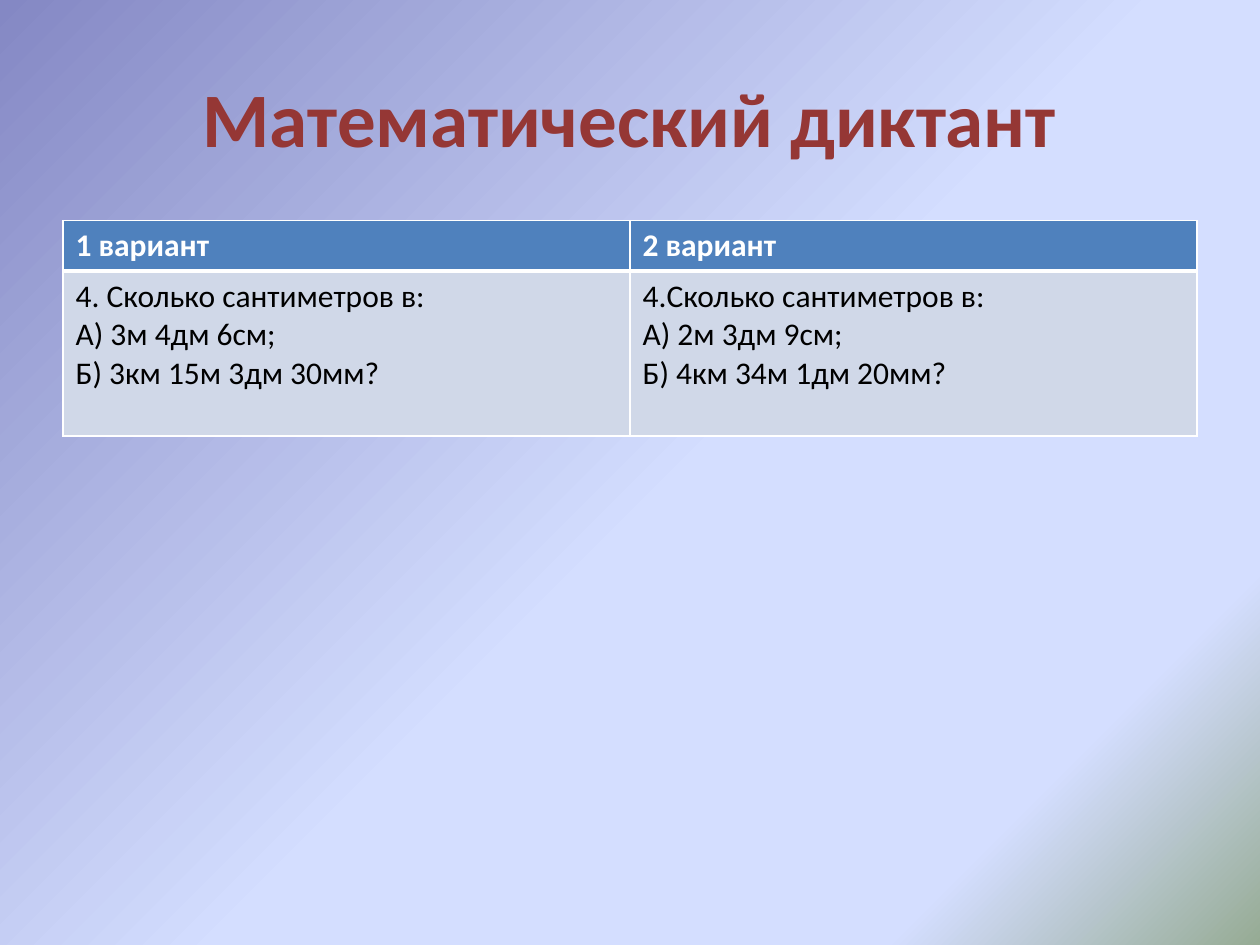
from lxml import etree
from pptx import Presentation
from pptx.dml.color import RGBColor
from pptx.enum.text import MSO_ANCHOR, PP_ALIGN
from pptx.oxml.ns import qn
from pptx.util import Inches, Pt

MIDDLE = MSO_ANCHOR.MIDDLE
CENTER = PP_ALIGN.CENTER
FONT = "Calibri"
WIDTH, HEIGHT = Inches(10), Inches(7.5)
MARGIN = 0.05
BACKGROUND_STOPS = [(0, "8488C4"), (53, "D4DEFF"), (83, "D4DEFF"), (100, "96AB94")]
ROW_HEIGHTS = [0.4, 1.31]
VARIANTS = [
    ["1 вариант", "4. Сколько сантиметров в:\nА) 3м 4дм 6см;\nБ) 3км 15м 3дм 30мм?"],
    ["2 вариант", "4.Сколько сантиметров в:\nА) 2м 3дм 9см;\nБ) 4км 34м 1дм 20мм?"],
]


def colour(value):
    """Return the colour for a hex string."""
    return RGBColor.from_string(value)


def add_colour(parent, value):
    """Append a hex colour element to an XML parent."""
    etree.SubElement(parent, qn("a:srgbClr"), val=value)


def paint_background(slide):
    """Fill the background with the diagonal gradient."""
    fill = slide.background.fill
    fill.gradient()
    fill.gradient_angle = 315
    stops = slide.element.find(".//" + qn("a:gsLst"))
    for stop in list(stops):
        stops.remove(stop)
    for position, value in BACKGROUND_STOPS:
        add_colour(etree.SubElement(stops, qn("a:gs"), pos=str(position * 1000)), value)


def write(frame, text, size, value, bold):
    """Set the text of a frame and format its runs."""
    frame.text = text
    for para in frame.paragraphs:
        for span in para.runs:
            span.font.name = FONT
            span.font.size = Pt(size)
            span.font.bold = bold
            span.font.color.rgb = colour(value)


def add_title(slide, text):
    """Add the centred heading."""
    box = slide.shapes.add_textbox(
        int(WIDTH * MARGIN), int(HEIGHT * 0.04),
        int(WIDTH * (1 - 2 * MARGIN)), Inches(1.25))
    frame = box.text_frame
    frame.word_wrap = True
    frame.vertical_anchor = MIDDLE
    write(frame, text, 44, "953735", True)
    frame.paragraphs[0].alignment = CENTER


def add_borders(cell, top, bottom):
    """Draw white cell borders with the given top and bottom widths."""
    properties = cell._tc.get_or_add_tcPr()
    for side, width in (("L", 1), ("R", 1), ("T", top), ("B", bottom)):
        line = etree.SubElement(properties, qn("a:ln" + side), w=str(Pt(width)))
        add_colour(etree.SubElement(line, qn("a:solidFill")), "FFFFFF")


def style_cell(cell, text, header):
    """Write and paint one header or body cell."""
    write(cell.text_frame, text, 18, "FFFFFF" if header else "000000", header)
    add_borders(cell, *((1, 3) if header else (3, 1)))
    cell.fill.solid()
    cell.fill.fore_color.rgb = colour("4F81BD" if header else "D0D8E8")


def add_variants(slide):
    """Add the table with one column per variant."""
    table = slide.shapes.add_table(
        len(ROW_HEIGHTS), len(VARIANTS), int(WIDTH * MARGIN), Inches(1.75),
        int(WIDTH * (1 - 2 * MARGIN)), Inches(sum(ROW_HEIGHTS))).table
    for row, height in zip(table.rows, ROW_HEIGHTS):
        row.height = Inches(height)
    for column, texts in enumerate(VARIANTS):
        for row, text in enumerate(texts):
            style_cell(table.cell(row, column), text, row == 0)


def main():
    """Build and save the deck."""
    deck = Presentation()
    deck.slide_width, deck.slide_height = WIDTH, HEIGHT
    page = deck.slides.add_slide(deck.slide_layouts[6])
    paint_background(page)
    add_title(page, "Математический диктант")
    add_variants(page)
    deck.save("out.pptx")


if __name__ == "__main__":
    main()
